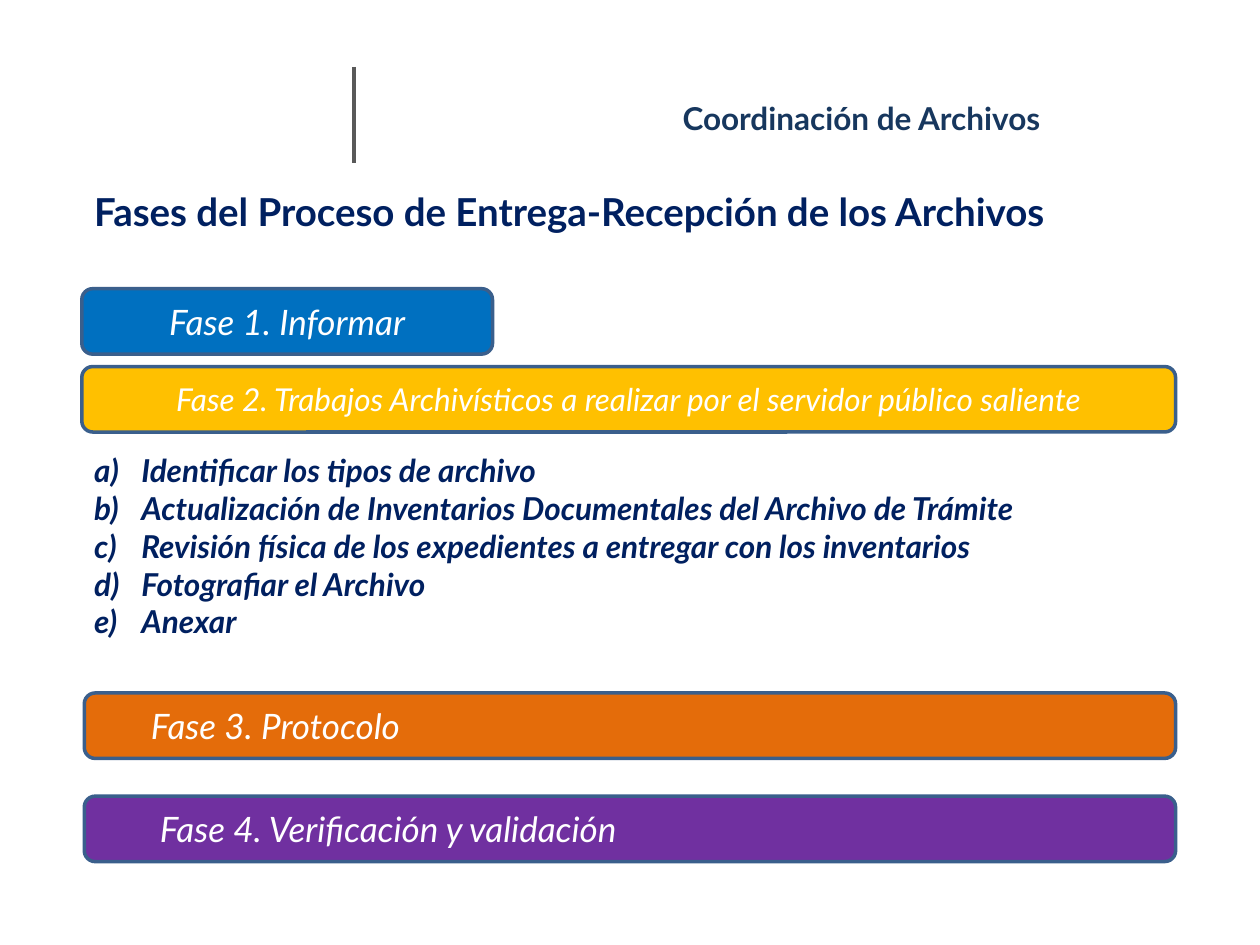
from dataclasses import dataclass

from lxml.etree import SubElement
from pptx import Presentation
from pptx.dml.color import RGBColor
from pptx.enum.shapes import MSO_CONNECTOR as Connector, MSO_SHAPE as Preset
from pptx.enum.text import MSO_ANCHOR as Anchor, MSO_AUTO_SIZE as AutoSize, PP_ALIGN as Align
from pptx.oxml.ns import qn
from pptx.util import Cm, Pt

FONT = "Lato"
NAVY = "002060"
OUTLINE = "3A5F8C"
BAR_HEIGHT = 1.32
HANGING = Cm(0.95)


@dataclass
class Heading:
    text: str
    left: float
    top: float
    width: float
    height: float
    size: int
    color: str
    wrap: bool


@dataclass
class Phase:
    text: str
    left: float
    top: float
    width: float
    fill: str
    size: int = 20
    align: Align = Align.LEFT
    margin: float = 0.25


HEADINGS = [
    Heading("Coordinación de Archivos", 13.51, 1.88, 8.46, 1.02, 18, "17375E", False),
    Heading("Fases del Proceso de Entrega-Recepción de los Archivos",
            1.65, 3.66, 20.68, 1.19, 22, NAVY, True),
]
PHASES = [
    Phase("Fase 1. Informar", 1.65, 5.82, 8.28, "0070C0", align=Align.CENTER),
    Phase("Fase 2. Trabajos Archivísticos a realizar por el servidor público saliente",
          1.65, 7.39, 22.05, "FFC000", size=18, align=Align.CENTER),
    Phase("Fase 3. Protocolo", 1.7, 13.97, 22, "E46C0A", align=Align.JUSTIFY, margin=1.28),
    Phase("Fase 4. Verificación y validación", 1.7, 16.05, 22, "7030A0", margin=1.46),
]
TASKS = [
    "Identificar los tipos de archivo",
    "Actualización de Inventarios Documentales del Archivo de Trámite",
    "Revisión física de los expedientes a entregar con los inventarios",
    "Fotografiar el Archivo",
    "Anexar",
]


def rgb(color: str) -> RGBColor:
    return RGBColor.from_string(color)


def style(paragraph, size: int, color: str, bold: bool = False, italic: bool = False) -> None:
    font = paragraph.font
    font.name = FONT
    font.size = Pt(size)
    font.bold = bold
    font.italic = italic
    font.color.rgb = rgb(color)


def add_divider(slide) -> None:
    line = slide.shapes.add_connector(
        Connector.STRAIGHT, Cm(7.14), Cm(1.35), Cm(7.14), Cm(3.28))
    line.line.color.rgb = rgb("595959")
    line.line.width = Pt(2)
    SubElement(line._element.spPr, qn("a:effectLst"))


def add_text_frame(slide, left: float, top: float, width: float, height: float, wrap: bool):
    box = slide.shapes.add_textbox(Cm(left), Cm(top), Cm(width), Cm(height))
    frame = box.text_frame
    frame.word_wrap = wrap
    frame.auto_size = AutoSize.SHAPE_TO_FIT_TEXT
    return frame


def add_heading(slide, heading: Heading) -> None:
    frame = add_text_frame(slide, heading.left, heading.top, heading.width,
                           heading.height, heading.wrap)
    paragraph = frame.paragraphs[0]
    paragraph.text = heading.text
    style(paragraph, heading.size, heading.color, bold=True)


def add_phase(slide, phase: Phase) -> None:
    shape = slide.shapes.add_shape(
        Preset.ROUNDED_RECTANGLE, Cm(phase.left), Cm(phase.top), Cm(phase.width), Cm(BAR_HEIGHT))
    shape.shadow.inherit = False
    shape.fill.solid()
    shape.fill.fore_color.rgb = rgb(phase.fill)
    shape.line.color.rgb = rgb(OUTLINE)
    shape.line.width = Pt(2)
    frame = shape.text_frame
    frame.word_wrap = True
    frame.vertical_anchor = Anchor.MIDDLE
    frame.margin_left = Cm(phase.margin)
    paragraph = frame.paragraphs[0]
    paragraph.text = phase.text
    paragraph.alignment = phase.align
    style(paragraph, phase.size, "FFFFFF", italic=True)


def add_tasks(slide, tasks: list[str]) -> None:
    frame = add_text_frame(slide, 1.65, 8.97, 22, 4.11, True)
    frame.text = "\n".join(tasks)
    for paragraph in frame.paragraphs:
        paragraph.alignment = Align.JUSTIFY
        properties = paragraph._p.get_or_add_pPr()
        properties.set("marL", str(HANGING))
        properties.set("indent", str(-HANGING))
        SubElement(properties, qn("a:buFont"), typeface="+mj-lt")
        SubElement(properties, qn("a:buAutoNum"), type="alphaLcParenR")
        style(paragraph, 18, NAVY, bold=True, italic=True)


def main() -> None:
    presentation = Presentation()
    presentation.slide_width = Cm(25.4)
    presentation.slide_height = Cm(19.05)
    slide = presentation.slides.add_slide(presentation.slide_layouts[6])
    add_divider(slide)
    for heading in HEADINGS:
        add_heading(slide, heading)
    for phase in PHASES:
        add_phase(slide, phase)
    add_tasks(slide, TASKS)
    presentation.save("out.pptx")


if __name__ == "__main__":
    main()
